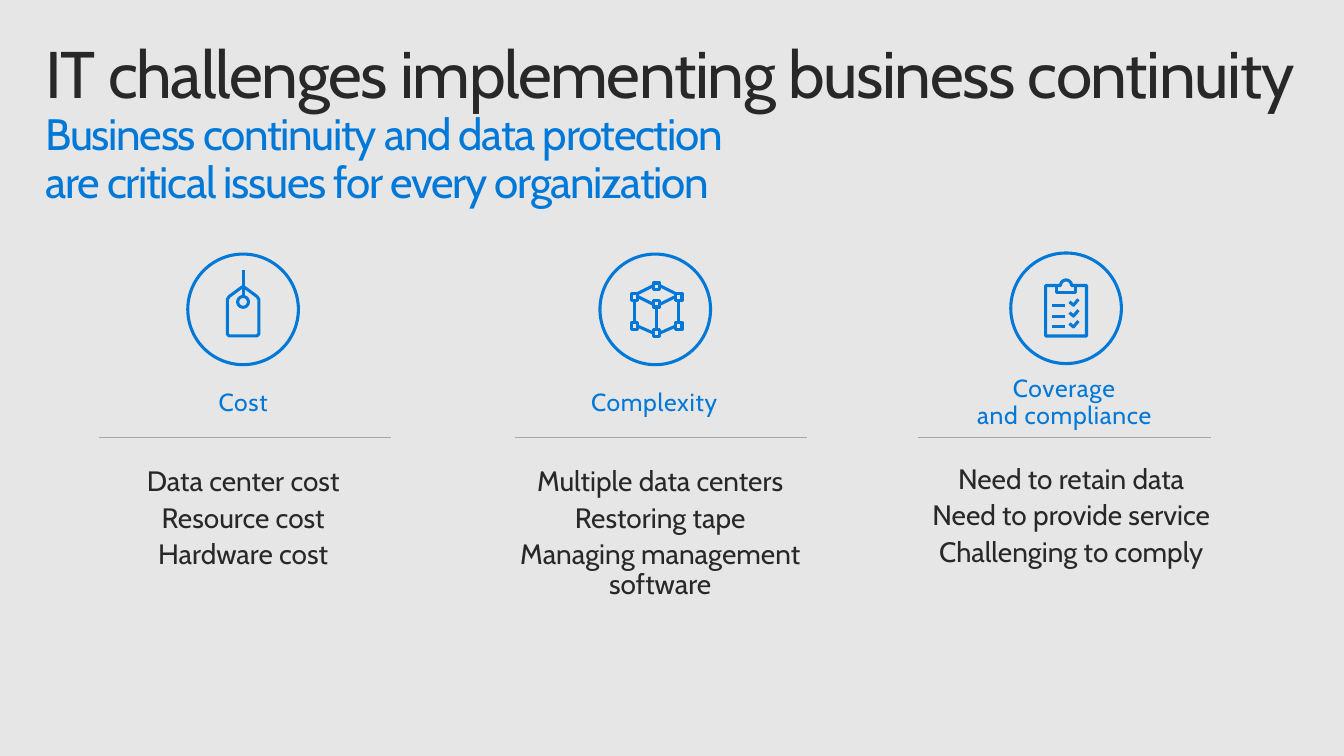
from math import cos, pi, sin

from pptx import Presentation
from pptx.dml.color import RGBColor
from pptx.enum.shapes import MSO_CONNECTOR as Connector, MSO_SHAPE as Preset
from pptx.enum.text import MSO_ANCHOR as Anchor, MSO_AUTO_SIZE as AutoSize, PP_ALIGN as Align
from pptx.oxml.ns import qn
from pptx.util import Pt

BLUE, DARK, GRAY, BACKGROUND = "0078D7", "282828", "A6A6A6", "E6E6E6"


def color(value):
    return RGBColor.from_string(value)


def apply(target, values):
    for name, value in values.items():
        setattr(target, name, value)


def arc(x, y, radius, start, end, steps=32):
    angles = [start + (end - start) * step / steps for step in range(steps + 1)]
    return [(x + radius * cos(angle), y + radius * sin(angle)) for angle in angles]


def tag_strokes():
    right = [(0, -16.6), (1.4, -15.8), (10.1, -9.4), (11.5, -7.2), (11.5, 18), (10.1, 19.4)]
    outline = right + [(-x, y) for x, y in reversed(right)]
    return [outline, arc(0, -5.4, 3.9, 0, 2 * pi), [(0, -9.4), (0, -28.8)]]


def cube_strokes():
    half, side, shift = 2.3, 16.2, 1
    corners = [(0, -16.9), (0, -4), (0, 17.3)]
    corners += [(x, y) for x in (-side, side) for y in (-9, 12.2)]
    square = [(-half, -half), (half, -half), (half, half), (-half, half), (-half, -half)]
    strokes = [[(x + dx, y + dy) for dx, dy in square] for x, y in corners]
    for x, top, bottom in ((-side, -9, 12.2), (0, -4, 17.3), (side, -9, 12.2)):
        strokes.append([(x, top + half), (x, bottom - half)])
    for side_y, middle_y in ((-11.5, -17.3), (-9.4, -3.6), (12.2, 17.3)):
        for sign in (-1, 1):
            strokes.append([(sign * (side - half), side_y), (sign * half, middle_y)])
    return [[(x + shift, y) for x, y in stroke] for stroke in strokes]


def checklist_strokes():
    top = -16.6
    board = [(14.9, top), (14.9, 20.2), (-14.9, 20.2), (-14.9, top)]
    board += arc(0, top, 4, pi, 2 * pi) + [(14.9, top)]
    strokes = [board, [(-6.8, top), (-6.8, -11.5), (6.8, -11.5), (6.8, top)]]
    for row in range(3):
        y = -2.2 + 7.9 * row
        strokes.append([(-10.4, y), (-1.1, y)])
        strokes.append([(2.5, y - 2.5), (5.4, y), (9, y - 4.3)])
    return strokes


class SlideBuilder:
    font_name = "Cabin"
    line_spacing = 0.9
    icon_line = 2.25
    circle_size = 80.6

    def __init__(self, slide):
        self.slide = slide
        slide.background.fill.solid()
        slide.background.fill.fore_color.rgb = color(BACKGROUND)

    def place(self, shape, left, top, width, height):
        apply(shape, {"left": Pt(left), "top": Pt(top), "width": Pt(width), "height": Pt(height)})

    def frame(self, shape, inset_x, inset_y, wrap=True, auto_size=AutoSize.NONE):
        apply(shape.text_frame, {
            "margin_left": Pt(inset_x), "margin_right": Pt(inset_x),
            "margin_top": Pt(inset_y), "margin_bottom": Pt(inset_y),
            "word_wrap": wrap, "auto_size": auto_size, "vertical_anchor": Anchor.TOP})
        return shape.text_frame

    def style(self, paragraph, align, space_before=0):
        apply(paragraph, {"alignment": align, "line_spacing": self.line_spacing,
                          "space_before": Pt(space_before)})

    def run(self, paragraph, text, size, font_color, spacing=0):
        for index, line in enumerate(text.split("\n")):
            if index:
                paragraph.add_line_break()
            run = paragraph.add_run()
            run.text = line
            apply(run.font, {"name": self.font_name, "size": Pt(size), "bold": False})
            run.font.color.rgb = color(font_color)
            run._r.get_or_add_rPr().set("spc", str(round(spacing * 100)))

    def title(self, title, subtitle):
        shape = self.slide.shapes.title
        self.place(shape, 21.6, 23, 936, 72)
        paragraph = self.frame(shape, 11.5, 7.2).paragraphs[0]
        self.style(paragraph, Align.LEFT)
        self.run(paragraph, title, 48, DARK, -1)
        paragraph.add_line_break()
        self.run(paragraph, subtitle, 32, BLUE, -1)

    def heading(self, text, box):
        shape = self.slide.shapes.add_textbox(0, 0, 0, 0)
        self.place(shape, *box)
        paragraph = self.frame(shape, 14.4, 11.5, wrap=False).paragraphs[0]
        self.style(paragraph, Align.CENTER)
        self.run(paragraph, text, 18, BLUE, 0.5)

    def points(self, shape, lines, box):
        self.place(shape, *box)
        frame = self.frame(shape, 7.2, 7.2, auto_size=AutoSize.SHAPE_TO_FIT_TEXT)
        for index, line in enumerate(lines):
            paragraph = frame.add_paragraph() if index else frame.paragraphs[0]
            properties = paragraph._p.get_or_add_pPr()
            properties.set("marL", "0")
            properties.set("indent", "0")
            properties.append(properties.makeelement(qn("a:buNone"), {}))
            self.style(paragraph, Align.CENTER, 4.4 if index else 0)
            self.run(paragraph, line, 20.4, DARK)

    def outline(self, shape):
        shape.shadow.inherit = False
        shape.fill.background()
        shape.line.color.rgb = color(BLUE)
        shape.line.width = Pt(self.icon_line)

    def icon(self, center_x, center_y, strokes):
        circle = self.slide.shapes.add_shape(Preset.OVAL, 0, 0, 0, 0)
        size = self.circle_size
        self.place(circle, center_x - size / 2, center_y - size / 2, size, size)
        self.outline(circle)
        builder = None
        for stroke in strokes:
            start, *rest = [(Pt(center_x + x), Pt(center_y + y)) for x, y in stroke]
            if builder is None:
                builder = self.slide.shapes.build_freeform(*start)
            else:
                builder.move_to(*start)
            builder.add_line_segments(rest, close=stroke[0] == stroke[-1] or strokes[0] is stroke)
        self.outline(builder.convert_to_shape())

    def rule(self, left, top, width):
        line = self.slide.shapes.add_connector(
            Connector.STRAIGHT, Pt(left), Pt(top), Pt(left + width), Pt(top))
        line.line.color.rgb = color(GRAY)
        line.line.width = Pt(0.25)
        properties = line._element.spPr
        properties.append(properties.makeelement(qn("a:effectLst"), {}))


CHALLENGES = [
    {"heading": "Cost", "heading_box": (136.8, 272.9, 80.6, 48.2),
     "points": ["Data center cost", "Resource cost", "Hardware cost"],
     "points_box": (59.8, 333.4, 234.7, 92.9),
     "center": (177.1, 225.4), "strokes": tag_strokes(), "rule_left": 72},
    {"heading": "Complexity", "heading_box": (414.7, 272.9, 123.8, 48.2),
     "points": ["Multiple data centers", "Restoring tape", "Managing management software"],
     "points_box": (351.4, 333.4, 259.2, 115.2),
     "center": (477.4, 225.4), "strokes": cube_strokes(), "rule_left": 375},
    {"heading": "Coverage\nand compliance", "heading_box": (668.9, 262.8, 213.1, 48.2),
     "points": ["Need to retain data", "Need to provide service", "Challenging to comply"],
     "points_box": (649.4, 331.9, 262.1, 92.9),
     "center": (776.7, 224.6), "strokes": checklist_strokes(), "rule_left": 669},
]


def main():
    presentation = Presentation()
    apply(presentation, {"slide_width": Pt(979.2), "slide_height": Pt(550.8)})
    slide = presentation.slides.add_slide(presentation.slide_layouts.get_by_name("Comparison"))
    builder = SlideBuilder(slide)
    builder.title("IT challenges implementing business continuity",
                  "Business continuity and data protection\nare critical issues for every organization")
    *bodies, spare = list(slide.placeholders)[1:5]
    spare._element.getparent().remove(spare._element)
    for body, challenge in zip(bodies, CHALLENGES):
        builder.heading(challenge["heading"], challenge["heading_box"])
        builder.points(body, challenge["points"], challenge["points_box"])
        builder.icon(*challenge["center"], challenge["strokes"])
        builder.rule(challenge["rule_left"], 318.2, 213)
    presentation.save("out.pptx")


if __name__ == "__main__":
    main()
